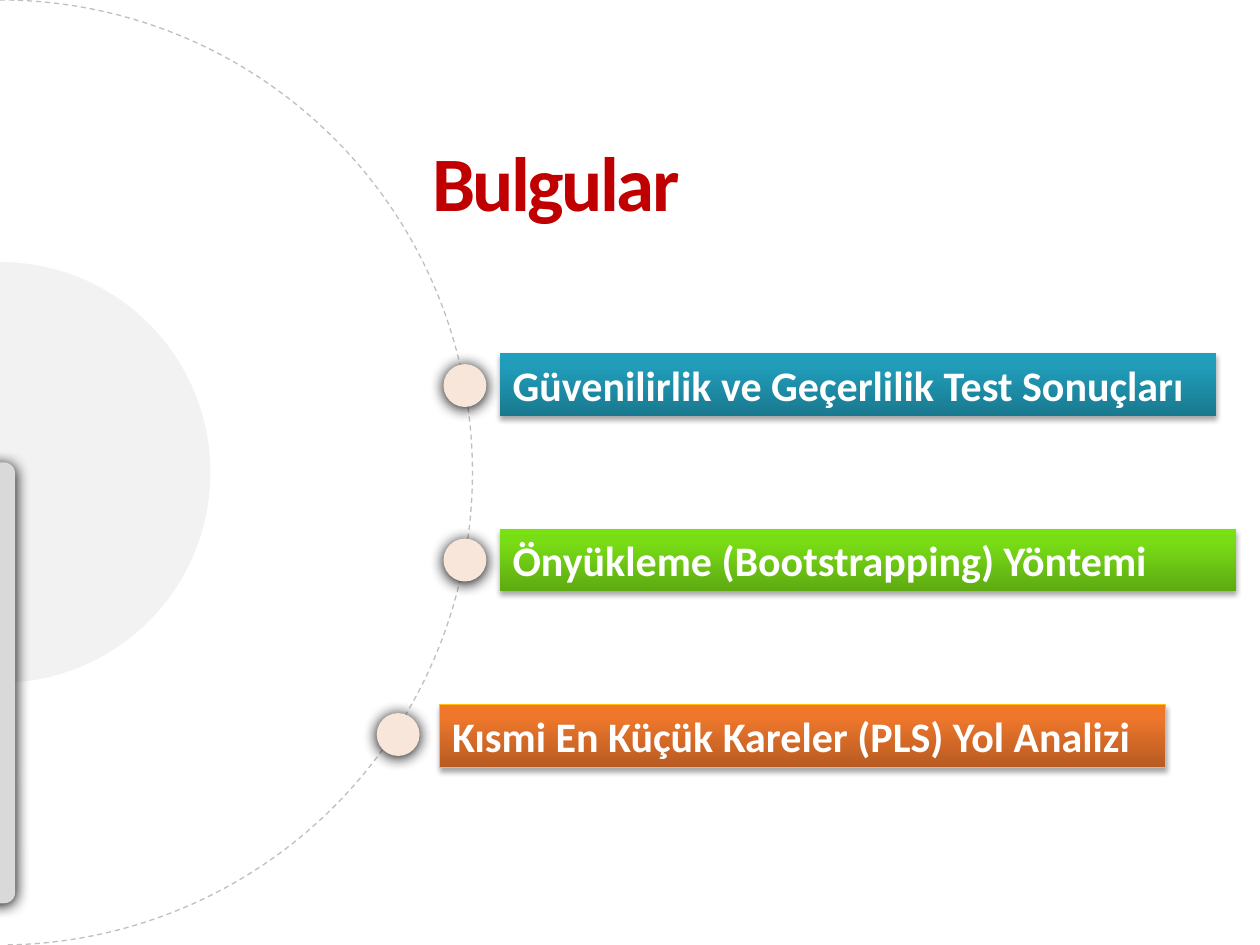
from lxml import etree
from pptx import Presentation
from pptx.dml.color import RGBColor
from pptx.enum.dml import MSO_LINE
from pptx.enum.shapes import MSO_SHAPE
from pptx.enum.text import MSO_ANCHOR, PP_ALIGN
from pptx.oxml import parse_xml
from pptx.oxml.ns import qn
from pptx.util import Inches, Pt

ARC, RECT, OVAL, ROUND = (MSO_SHAPE.ARC, MSO_SHAPE.RECTANGLE,
                          MSO_SHAPE.OVAL, MSO_SHAPE.ROUNDED_RECTANGLE)
DASH, LEFT = MSO_LINE.DASH, PP_ALIGN.LEFT
TOP, MIDDLE = MSO_ANCHOR.TOP, MSO_ANCHOR.MIDDLE
DRAWING = "http://schemas.openxmlformats.org/drawingml/2006/main"

# Content: text, bar left, bar width, dot left, gradient from bottom to top, outline
TITLE = "Bulgular"
TOPICS = [
    ("Güvenilirlik ve Geçerlilik Test Sonuçları", 3.97, 5.68, 3.52,
     ("19798F", "219DBA", "1EA0BE"), None),
    ("Önyükleme (Bootstrapping) Yöntemi", 3.97, 5.84, 3.52,
     ("5DAA11", "79DD16", "7AE212"), None),
    ("Kısmi En Küçük Kareler (PLS) Yol Analizi", 3.49, 5.76, 2.99,
     ("B85B22", "EE772C", "F37629"), "FFC000"),
]

THEME = {
    "title": {"name": "Calibri", "size": Pt(44), "bold": True, "color": "C00000"},
    "topic": {"name": "Calibri", "size": Pt(24), "bold": True, "color": "FFFFFF"},
    "ring": "FFFFFF", "ring_line": "BFBFBF", "core": "F2F2F2",
    "dot": "F9E6DA", "tab": "D9D9D9",
    # Shadows: opacity in percent, blur and distance in points
    "bar_shadow": (35, 3.1, 1.8), "round_shadow": (100, 8.5, 1),
}
GRADIENT_STOPS = (0, 80, 100)
BAR_TOP, BAR_STEP, BAR_HEIGHT = 2.8, 1.395, 0.5
DOT_TOP, DOT_STEP, DOT_SIZE = 2.89, 1.385, 0.34
CENTRE_Y = 3.75


def add_shape(page, kind, place, fill=None, line=None, shadow=None):
    shape = page.shapes.add_shape(kind, *(Inches(v) for v in place))
    if fill:
        shape.fill.solid()
        shape.fill.fore_color.rgb = RGBColor.from_string(fill)
    if line:
        shape.line.color.rgb = RGBColor.from_string(line)
        shape.line.width = Pt(0.75)
    else:
        shape.line.fill.background()
    shape.shadow.inherit = False
    if shadow:
        opacity, blur, distance = shadow
        effects = shape._element.spPr.find(qn("a:effectLst"))
        effects.append(parse_xml(
            f'<a:outerShdw xmlns:a="{DRAWING}" blurRad="{Pt(blur)}" '
            f'dist="{Pt(distance)}" dir="5400000" rotWithShape="0">'
            f'<a:srgbClr val="000000"><a:alpha val="{opacity * 1000}"/>'
            '</a:srgbClr></a:outerShdw>'))
    return shape


def add_half_disc(page, radius, end, fill, line=None):
    place = (-radius, CENTRE_Y - radius, 2 * radius, 2 * radius)
    arc = add_shape(page, ARC, place, fill, line)
    arc.adjustments[0], arc.adjustments[1] = 162, end
    return arc


def set_gradient(shape, colors):
    shape.fill.gradient()
    shape.fill.gradient_angle = 90
    stops = shape._element.spPr.find(qn("a:gradFill")).find(qn("a:gsLst"))
    for stop in list(stops):
        stops.remove(stop)
    for position, color in zip(GRADIENT_STOPS, colors):
        stop = etree.SubElement(stops, qn("a:gs"), pos=str(position * 1000))
        etree.SubElement(stop, qn("a:srgbClr"), val=color)


def write(box, text, style, anchor):
    frame = box.text_frame
    frame.word_wrap = True
    frame.vertical_anchor = anchor
    para = frame.paragraphs[0]
    para.alignment = LEFT
    span = para.add_run()
    span.text = text
    for name, value in style.items():
        if name == "color":
            span.font.color.rgb = RGBColor.from_string(value)
        else:
            setattr(span.font, name, value)
    return frame, para, span


def main():
    deck = Presentation()
    deck.slide_width, deck.slide_height = Inches(10), Inches(7.5)
    page = deck.slides.add_slide(deck.slide_layouts[6])

    # Dashed outer ring
    ring = add_half_disc(page, 3.75, 53.71, THEME["ring"], THEME["ring_line"])
    ring.line.dash_style = DASH

    # Topic bars
    for row, (text, left, width, _, colors, outline) in enumerate(TOPICS):
        place = (left, BAR_TOP + row * BAR_STEP, width, BAR_HEIGHT)
        bar = add_shape(page, RECT, place, line=outline, shadow=THEME["bar_shadow"])
        set_gradient(bar, colors)
        write(bar, text, THEME["topic"], MIDDLE)

    # Dots on the ring
    for row, topic in enumerate(TOPICS):
        place = (topic[3], DOT_TOP + row * DOT_STEP, DOT_SIZE, DOT_SIZE)
        add_shape(page, OVAL, place, THEME["dot"], shadow=THEME["round_shadow"])

    # Inner disc and the tab at the left edge
    add_half_disc(page, 1.67, 53.6, THEME["core"])
    tab = add_shape(page, ROUND, (-0.13, 3.67, 0.25, 3.5), THEME["tab"],
                    shadow=THEME["round_shadow"])
    tab.adjustments[0] = 0.35

    # Title
    box = page.shapes.add_textbox(Inches(3.43), Inches(1.15), Inches(6.57), Inches(0.79))
    frame, para, span = write(box, TITLE, THEME["title"], TOP)
    for side in ("left", "right", "top", "bottom"):
        setattr(frame, f"margin_{side}", 0)
    para.line_spacing = 0.9
    span._r.get_or_add_rPr().set("spc", "-150")

    deck.save("out.pptx")


if __name__ == "__main__":
    main()
